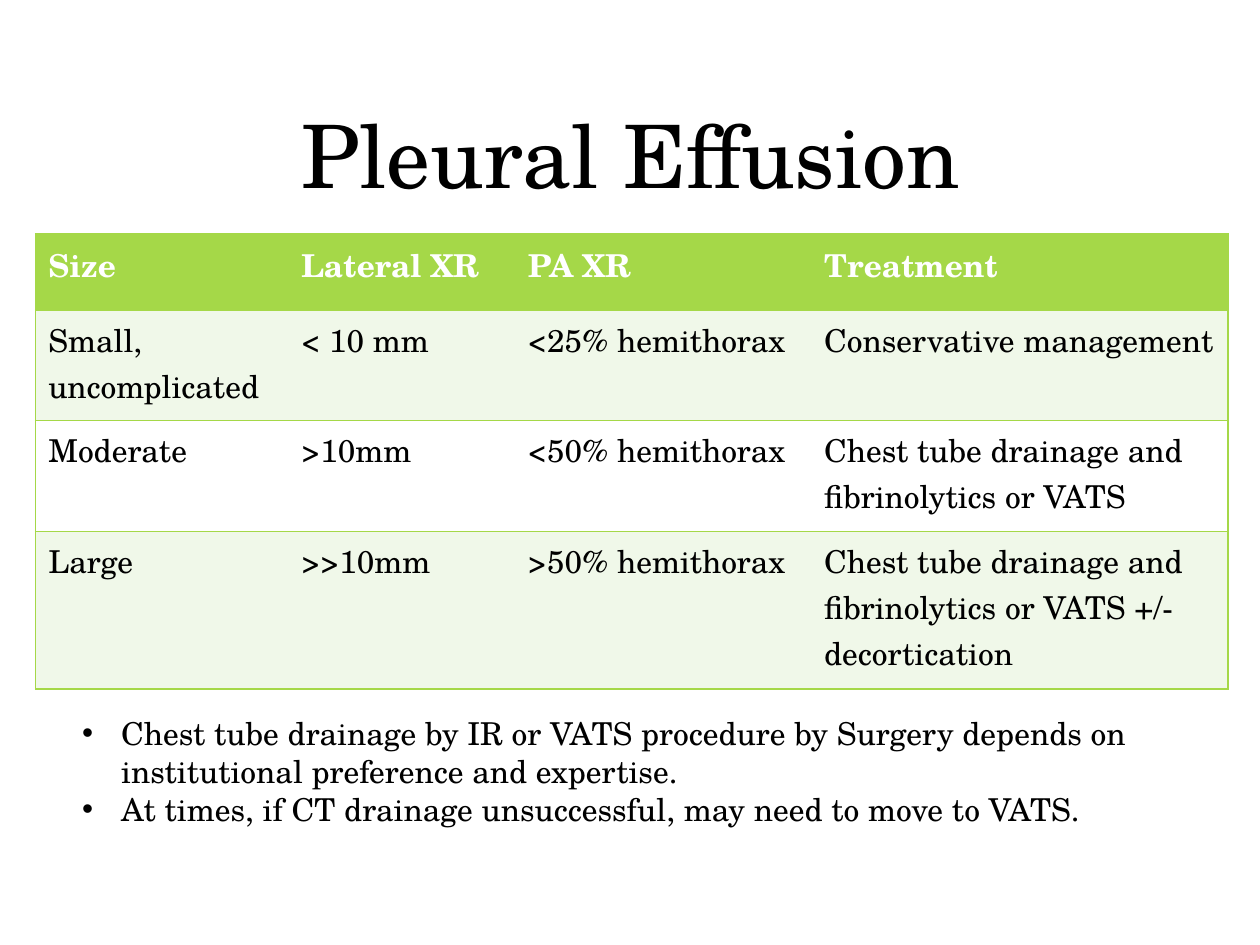
"""Build the pleural effusion slide: title, treatment table and notes."""
from typing import NamedTuple

from lxml.etree import SubElement
from pptx import Presentation
from pptx.dml.color import RGBColor
from pptx.enum.text import MSO_ANCHOR, MSO_AUTO_SIZE, PP_ALIGN
from pptx.oxml.ns import qn
from pptx.util import Cm, Pt

FONT = "TeX Gyre Schola"
BLACK = RGBColor(0x00, 0x00, 0x00)
WHITE = RGBColor(0xFF, 0xFF, 0xFF)
GREEN = RGBColor(0xA5, 0xD8, 0x48)
PALE = RGBColor(0xF0, 0xF8, 0xE9)


class Effusion(NamedTuple):
    size: str
    lateral: str
    pa: str
    treatment: str


HEADER = Effusion("Size", "Lateral XR", "PA XR", "Treatment")
EFFUSIONS = [
    Effusion("Small, uncomplicated", "< 10 mm", "<25% hemithorax",
             "Conservative management"),
    Effusion("Moderate", ">10mm", "<50% hemithorax",
             "Chest tube drainage and fibrinolytics or VATS"),
    Effusion("Large", ">>10mm", ">50% hemithorax",
             "Chest tube drainage and fibrinolytics or VATS +/- decortication"),
]
NOTES = [
    "Chest tube drainage by IR or VATS procedure by Surgery depends on "
    "institutional preference and expertise.",
    "At times, if CT drainage unsuccessful, may need to move to VATS.",
]
COL_WIDTHS = [Cm(5.1), Cm(4.57), Cm(5.97), Cm(8.4)]
ROW_HEIGHTS = [Cm(1.53), Cm(2.23), Cm(2.23), Cm(3.18)]


def write(p, text: str, *, size=18, color=BLACK, bold=False,
          align=PP_ALIGN.LEFT) -> None:
    p.alignment = align
    p.line_spacing = 1.0
    p.space_before = Pt(0)
    r = p.add_run()
    r.text = text
    r.font.name = FONT
    r.font.size = Pt(size)
    r.font.bold = bold
    r.font.color.rgb = color


def place(sp, left, top, width, height, anchor) -> None:
    sp.left, sp.top, sp.width, sp.height = left, top, width, height
    tf = sp.text_frame
    tf.word_wrap = True
    tf.auto_size = MSO_AUTO_SIZE.NONE
    tf.vertical_anchor = anchor


def set_borders(cell, visible: str) -> None:
    tc_pr = cell._tc.get_or_add_tcPr()
    for side in "LRTB":
        ln = SubElement(tc_pr, qn(f"a:ln{side}"), w=str(Pt(1)))
        if side in visible:
            fill = SubElement(ln, qn("a:solidFill"))
            SubElement(fill, qn("a:srgbClr"), val=str(GREEN))
        else:
            SubElement(ln, qn("a:noFill"))


def add_effusion_table(s) -> None:
    rows = [HEADER, *EFFUSIONS]
    last = len(COL_WIDTHS) - 1
    table = s.shapes.add_table(len(rows), len(COL_WIDTHS), Cm(0.72), Cm(4.72),
                               sum(COL_WIDTHS), sum(ROW_HEIGHTS)).table
    for column, width in zip(table.columns, COL_WIDTHS):
        column.width = width
    for i, (row, height) in enumerate(zip(rows, ROW_HEIGHTS)):
        table.rows[i].height = height
        header = i == 0
        fill = GREEN if header else PALE if i % 2 else WHITE
        for j, text in enumerate(row):
            cell = table.cell(i, j)
            cell.margin_right = Cm(0.2)
            set_borders(cell, "TB" + "L" * (j == 0) + "R" * (j == last))
            cell.fill.solid()
            cell.fill.fore_color.rgb = fill
            write(cell.text_frame.paragraphs[0], text, bold=header,
                  color=WHITE if header else BLACK)


def add_notes(sp) -> None:
    place(sp, Cm(1.4), Cm(14.27), Cm(22.15), Cm(2.57), MSO_ANCHOR.TOP)
    tf = sp.text_frame
    for i, note in enumerate(NOTES):
        p = tf.add_paragraph() if i else tf.paragraphs[0]
        write(p, note)
        p_pr = p._p.get_or_add_pPr()
        p_pr.set("marL", str(Cm(0.79)))
        p_pr.set("indent", str(-Cm(0.79)))
        SubElement(p_pr, qn("a:buChar"), char="•")


def main() -> None:
    prs = Presentation()
    prs.slide_width, prs.slide_height = Cm(25.4), Cm(19.05)
    s = prs.slides.add_slide(prs.slide_layouts[1])
    title = s.shapes.title
    place(title, Cm(1.4), Cm(0.25), Cm(22.63), Cm(4.04), MSO_ANCHOR.BOTTOM)
    write(title.text_frame.paragraphs[0], "Pleural Effusion", size=50,
          align=PP_ALIGN.CENTER)
    add_effusion_table(s)
    add_notes(s.placeholders[1])
    prs.save("out.pptx")


if __name__ == "__main__":
    main()
